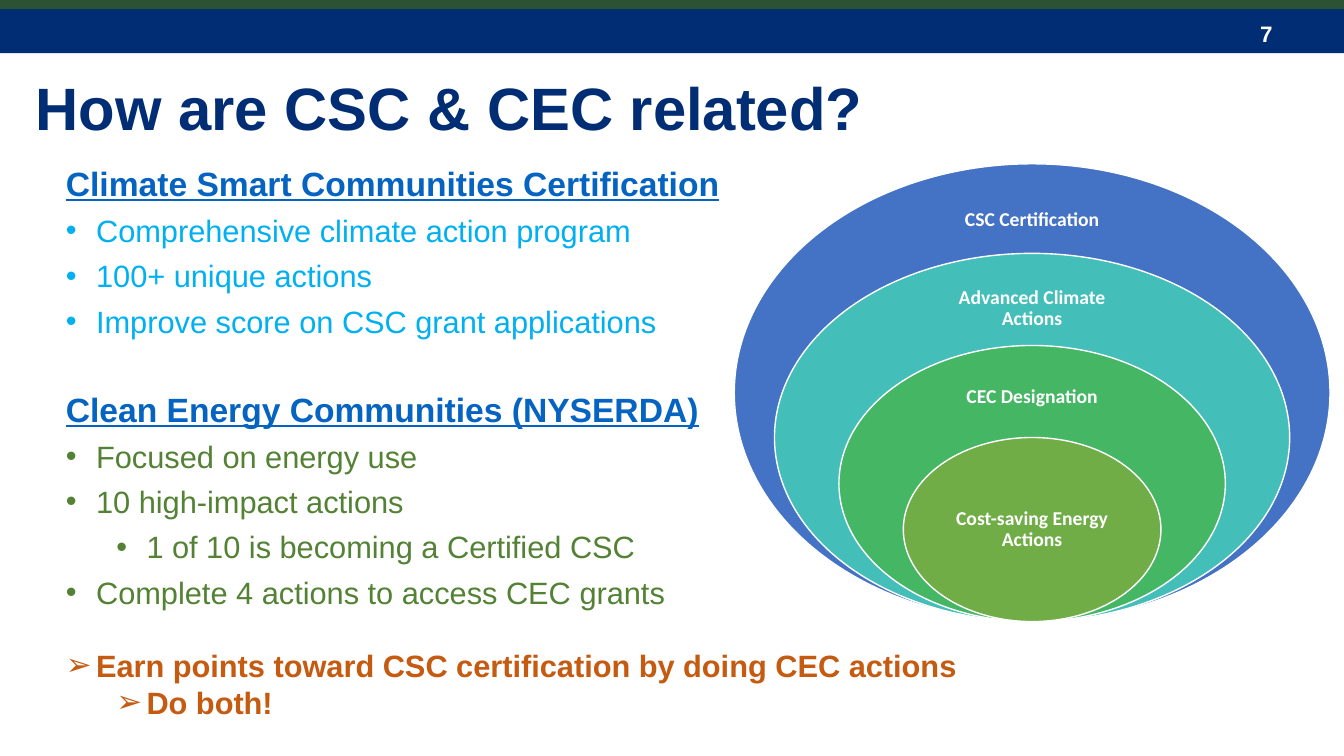
from lxml import etree
from pptx import Presentation
from pptx.dml.color import RGBColor
from pptx.enum.shapes import MSO_SHAPE
from pptx.enum.text import MSO_ANCHOR, MSO_AUTO_SIZE, PP_ALIGN
from pptx.oxml.ns import qn
from pptx.util import Pt

RECTANGLE, OVAL = MSO_SHAPE.RECTANGLE, MSO_SHAPE.OVAL
TOP, MIDDLE = MSO_ANCHOR.TOP, MSO_ANCHOR.MIDDLE
LEFT, CENTER, RIGHT = PP_ALIGN.LEFT, PP_ALIGN.CENTER, PP_ALIGN.RIGHT
NO_FIT = MSO_AUTO_SIZE.NONE

WHITE = RGBColor(0xFF, 0xFF, 0xFF)
NAVY = RGBColor(0x00, 0x2D, 0x73)
FOREST = RGBColor(0x2C, 0x52, 0x34)
LINK_BLUE = RGBColor(0x05, 0x63, 0xC1)
SKY = RGBColor(0x00, 0xB0, 0xF0)
LEAF = RGBColor(0x54, 0x82, 0x35)
RUST = RGBColor(0xC5, 0x5A, 0x11)
BLUE = RGBColor(0x44, 0x72, 0xC4)
TEAL = RGBColor(0x43, 0xBE, 0xB9)
GREEN = RGBColor(0x45, 0xB6, 0x64)
OLIVE = RGBColor(0x70, 0xAD, 0x47)

SLIDE_WIDTH, SLIDE_HEIGHT = 960, 540
BULLET_INDENT, LEVEL_INDENT = 21.6, 36

# heading, colour of its bullets, (level, text) of each bullet
PROGRAMS = [
    ("Climate Smart Communities Certification", SKY, [
        (0, "Comprehensive climate action program"),
        (0, "100+ unique actions"),
        (0, "Improve score on CSC grant applications")]),
    ("Clean Energy Communities (NYSERDA)", LEAF, [
        (0, "Focused on energy use"),
        (0, "10 high-impact actions"),
        (1, "1 of 10 is becoming a Certified CSC"),
        (0, "Complete 4 actions to access CEC grants")]),
]
TAKEAWAYS = [(0, "Earn points toward CSC certification by doing CEC actions"),
             (1, "Do both!")]

# label, fill, ellipse width and height, label top, width and height
RINGS = [
    ("CSC Certification", BLUE, 425.5, 327, 132.5, 119, 49),
    ("Advanced Climate Actions", TEAL, 368, 263, 196.6, 129, 47.5),
    ("CEC Designation", GREEN, 276, 197.25, 261.4, 129, 44.6),
    ("Cost-saving Energy Actions", OLIVE, 184, 131.5, 345.6, 130, 65.5),
]


def set_frame(frame, margins, anchor=TOP, wrap=True):
    frame.auto_size = NO_FIT
    frame.word_wrap = wrap
    frame.vertical_anchor = anchor
    (frame.margin_left, frame.margin_top,
     frame.margin_right, frame.margin_bottom) = [Pt(margin) for margin in margins]


def add_run(paragraph, text, size, color, bold=False, underline=False, font="Arial"):
    run = paragraph.add_run()
    run.text = text
    run.font.name = font
    run.font.size = Pt(size)
    run.font.bold = bold
    run.font.underline = underline
    run.font.color.rgb = color


def next_paragraph(frame):
    """Return the first paragraph while it is empty, then a new one."""
    first = frame.paragraphs[0]
    return frame.add_paragraph() if first.runs else first


def add_bullet(frame, level, text, mark, color, bold=False):
    paragraph = next_paragraph(frame)
    paragraph.level = level
    properties = paragraph._p.get_or_add_pPr()
    properties.set("marL", str(Pt(BULLET_INDENT + level * LEVEL_INDENT)))
    properties.set("indent", str(-Pt(BULLET_INDENT)))
    etree.SubElement(properties, qn("a:buFont")).set("typeface", "Arial")
    etree.SubElement(properties, qn("a:buChar")).set("char", mark)
    add_run(paragraph, text, 22, color, bold)
    return paragraph


def add_filled_shape(slide, kind, left, top, width, height, fill, outline=None):
    shape = slide.shapes.add_shape(kind, Pt(left), Pt(top), Pt(width), Pt(height))
    shape.shadow.inherit = False
    shape.fill.solid()
    shape.fill.fore_color.rgb = fill
    if outline is None:
        shape.line.fill.background()
    else:
        shape.line.color.rgb = outline
        shape.line.width = Pt(1)
    return shape


def add_text_box(slide, left, top, width, height):
    box = slide.shapes.add_textbox(Pt(left), Pt(top), Pt(width), Pt(height))
    return box.text_frame


def add_header(slide, left, top, width):
    # Navy bar with the page number, green strip above it
    bar = add_filled_shape(slide, RECTANGLE, left, top + 6.5, width, 31.5, NAVY)
    set_frame(bar.text_frame, (3, 8.5, 51, 5.5), MIDDLE)
    paragraph = bar.text_frame.paragraphs[0]
    paragraph.alignment = RIGHT
    add_run(paragraph, "7", 16, WHITE, bold=True)
    add_filled_shape(slide, RECTANGLE, left, top, width, 6.5, FOREST)


def add_title(slide, left, top, width, height):
    title = slide.shapes.title
    title.left, title.top, title.width, title.height = Pt(left), Pt(top), Pt(width), Pt(height)
    set_frame(title.text_frame, (9.6, 4.8, 9.6, 4.8))
    paragraph = title.text_frame.paragraphs[0]
    paragraph.alignment = LEFT
    add_run(paragraph, "How are CSC & CEC related?", 42.7, NAVY, bold=True)


def add_programs(slide, left, top, width, height):
    frame = add_text_box(slide, left, top, width, height)
    set_frame(frame, (7.2, 3.6, 7.2, 3.6))
    for index, (heading, color, bullets) in enumerate(PROGRAMS):
        paragraph = next_paragraph(frame)
        if index:
            paragraph.space_before = Pt(29)
        paragraph.space_after = Pt(6)
        add_run(paragraph, heading, 24, LINK_BLUE, bold=True, underline=True)
        for level, text in bullets:
            add_bullet(frame, level, text, "•", color).space_after = Pt(6)


def add_nested_ellipses(slide, left, top, width, height):
    # All ellipses share a centre line and a bottom edge
    center, bottom = left + width / 2, top + height
    for label, fill, ring_width, ring_height, label_top, label_width, label_height in RINGS:
        add_filled_shape(slide, OVAL, center - ring_width / 2, bottom - ring_height,
                         ring_width, ring_height, fill, WHITE)
        frame = add_text_box(slide, center - label_width / 2, label_top,
                             label_width, label_height)
        set_frame(frame, (8, 8, 8, 8), MIDDLE)
        paragraph = frame.paragraphs[0]
        paragraph.alignment = CENTER
        paragraph.line_spacing = 0.9
        add_run(paragraph, label, 14, WHITE, bold=True, font="Calibri")


def add_takeaways(slide, left, top, width, height):
    frame = add_text_box(slide, left, top, width, height)
    set_frame(frame, (7.2, 3.6, 7.2, 3.6), wrap=False)
    for level, text in TAKEAWAYS:
        add_bullet(frame, level, text, "➢", RUST, bold=True)


def main():
    presentation = Presentation()
    presentation.slide_width = Pt(SLIDE_WIDTH)
    presentation.slide_height = Pt(SLIDE_HEIGHT)
    slide = presentation.slides.add_slide(presentation.slide_layouts[5])
    add_header(slide, 0, 0, SLIDE_WIDTH)
    add_title(slide, 16, 46, 912, 65)
    add_programs(slide, 40, 113, 493, 343)
    add_nested_ellipses(slide, 524.5, 117, 425.5, 327)
    add_takeaways(slide, 40, 458.5, 657, 60.5)
    presentation.save("out.pptx")


if __name__ == "__main__":
    main()
